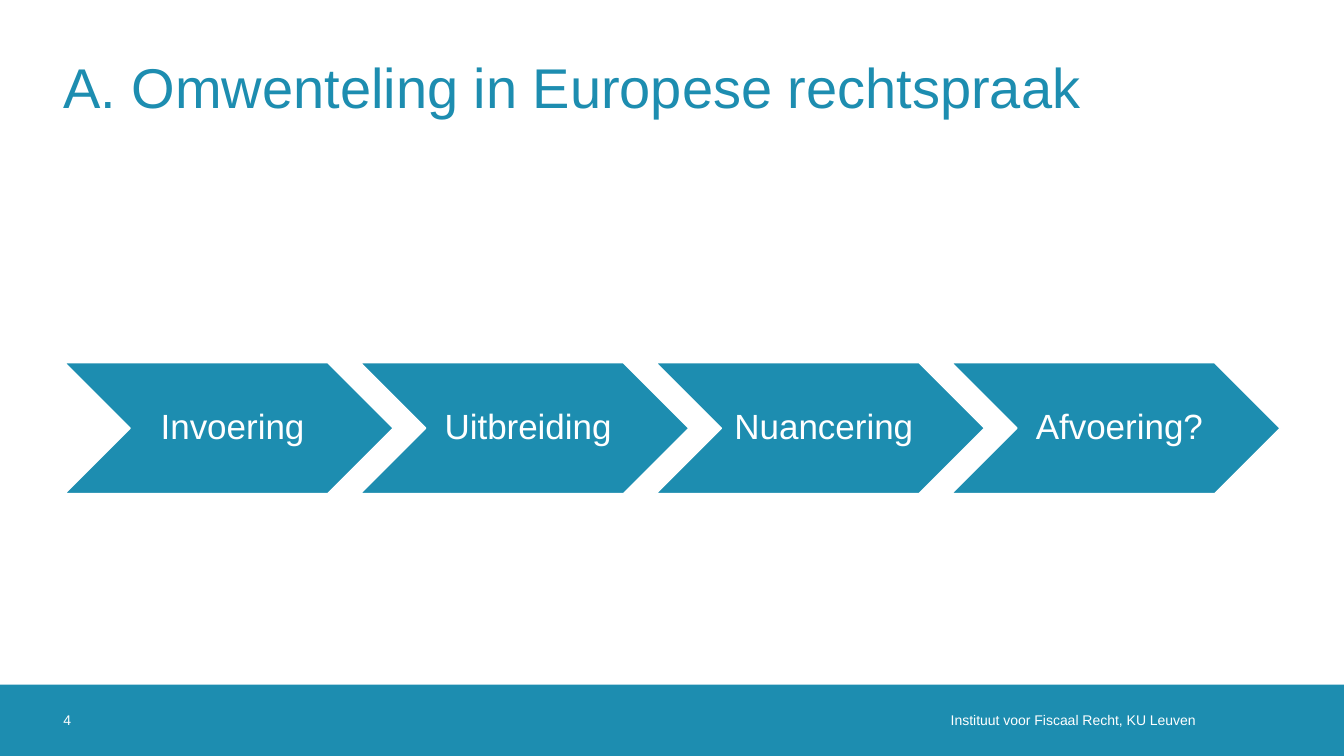
from dataclasses import dataclass

from pptx import Presentation
from pptx.dml.color import RGBColor
from pptx.enum.shapes import MSO_SHAPE
from pptx.enum.text import MSO_ANCHOR, PP_ALIGN
from pptx.util import Cm, Pt


@dataclass(frozen=True)
class Theme:
    font: str = "Arial"
    teal: RGBColor = RGBColor(0x1D, 0x8D, 0xB0)
    white: RGBColor = RGBColor(0xFF, 0xFF, 0xFF)
    title_size: int = 40
    phase_size: int = 25
    footer_size: int = 10


THEME = Theme()
SLIDE_WIDTH, SLIDE_HEIGHT = 33.87, 19.05
MARGIN = 1.6
FOOTER_TOP, FOOTER_HEIGHT = 17.25, 1.8
PHASES = ["Invoering", "Uitbreiding", "Nuancering", "Afvoering?"]
PHASE_LEFT, PHASE_TOP = 1.63, 9.14
PHASE_WIDTH, PHASE_HEIGHT, PHASE_PITCH = 8.28, 3.3, 7.45


def write_text(holder, text, size, color, align, insets=(0, 0, 0, 0)):
    """Set one vertically centred paragraph; insets are left, top, right, bottom."""
    frame = holder.text_frame
    frame.text = text
    frame.word_wrap = True
    frame.vertical_anchor = MSO_ANCHOR.MIDDLE
    (frame.margin_left, frame.margin_top,
     frame.margin_right, frame.margin_bottom) = map(Cm, insets)
    paragraph = frame.paragraphs[0]
    paragraph.alignment = align
    font = paragraph.runs[0].font
    font.name, font.size = THEME.font, Pt(size)
    font.color.rgb = color
    return paragraph


def add_filled_shape(slide, kind, left, top, width, height):
    shape = slide.shapes.add_shape(kind, Cm(left), Cm(top), Cm(width), Cm(height))
    shape.shadow.inherit = False
    shape.fill.solid()
    shape.fill.fore_color.rgb = THEME.teal
    return shape


def add_title(slide, text):
    title = slide.shapes.title
    title.left, title.top = Cm(MARGIN), Cm(0.58)
    title.width, title.height = Cm(30.66), Cm(3.2)
    write_text(title, text, THEME.title_size, THEME.teal, PP_ALIGN.LEFT)


def add_phase(slide, index, label):
    phase = add_filled_shape(slide, MSO_SHAPE.CHEVRON,
                             PHASE_LEFT + index * PHASE_PITCH, PHASE_TOP,
                             PHASE_WIDTH, PHASE_HEIGHT)
    phase.line.color.rgb = THEME.white
    phase.line.width = Pt(1)
    paragraph = write_text(phase, label, THEME.phase_size, THEME.white,
                           PP_ALIGN.CENTER, (0.28, 0.1, 0.1, 0.1))
    paragraph.line_spacing = 0.9


def add_footer_text(slide, text, left, width, align, right_inset=0):
    footer = slide.shapes.add_textbox(Cm(left), Cm(FOOTER_TOP),
                                      Cm(width), Cm(FOOTER_HEIGHT))
    write_text(footer, text, THEME.footer_size, THEME.white, align,
               (0, 0, right_inset, 0))


def main():
    deck = Presentation()
    deck.slide_width, deck.slide_height = Cm(SLIDE_WIDTH), Cm(SLIDE_HEIGHT)
    slide = deck.slides.add_slide(deck.slide_layouts[5])

    # Title
    add_title(slide, "A. Omwenteling in Europese rechtspraak")

    # Footer band
    band = add_filled_shape(slide, MSO_SHAPE.RECTANGLE,
                            0, FOOTER_TOP, SLIDE_WIDTH, FOOTER_HEIGHT)
    band.line.fill.background()

    # Phases of the case law
    for index, label in enumerate(PHASES):
        add_phase(slide, index, label)

    # Institute and slide number
    add_footer_text(slide, "Instituut voor Fiscaal Recht, KU Leuven",
                    16.76, 13.87, PP_ALIGN.RIGHT, 0.5)
    add_footer_text(slide, "4", MARGIN, 1.8, PP_ALIGN.LEFT)

    deck.save("out.pptx")


if __name__ == "__main__":
    main()
